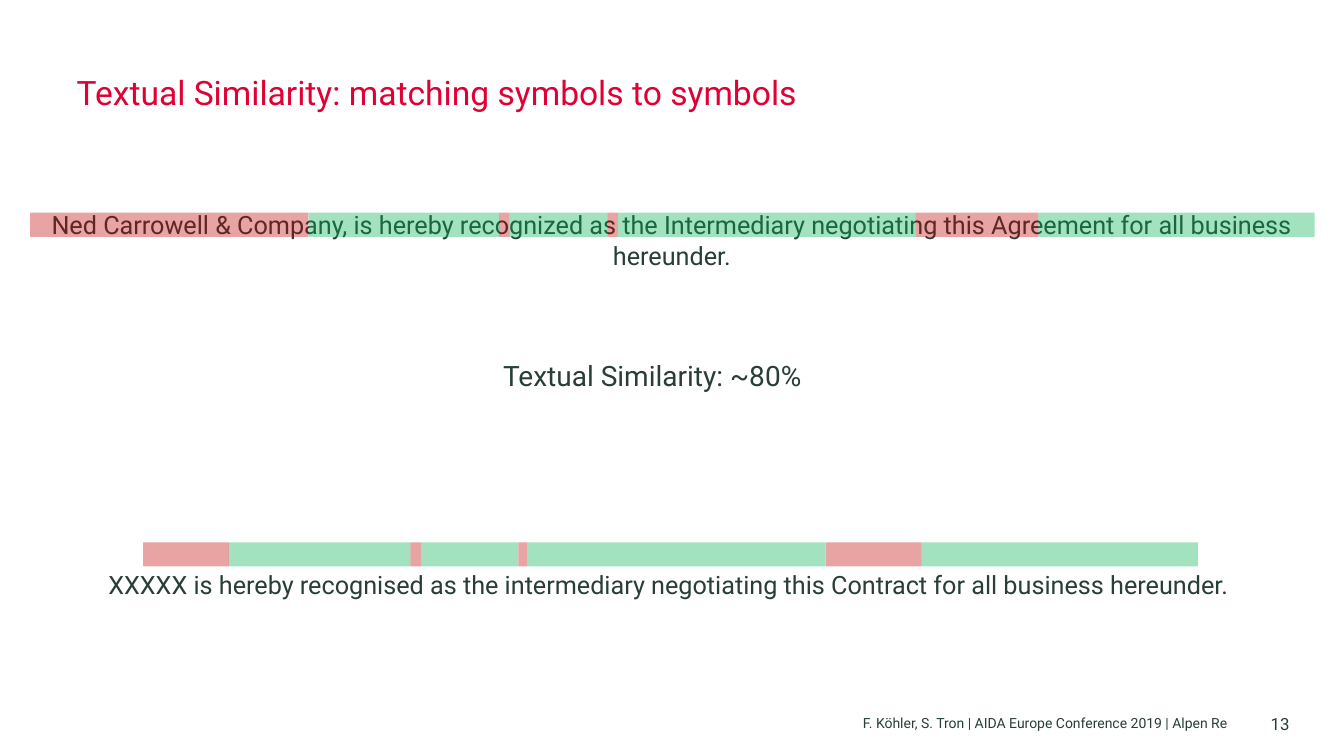
from dataclasses import dataclass
from itertools import pairwise

from lxml import etree
from pptx import Presentation
from pptx.dml.color import RGBColor
from pptx.enum.shapes import MSO_SHAPE
from pptx.enum.text import MSO_ANCHOR, PP_ALIGN
from pptx.oxml.ns import qn
from pptx.util import Inches, Pt

RECTANGLE = MSO_SHAPE.RECTANGLE
TOP, BOTTOM = MSO_ANCHOR.TOP, MSO_ANCHOR.BOTTOM
LEFT, CENTER, RIGHT = PP_ALIGN.LEFT, PP_ALIGN.CENTER, PP_ALIGN.RIGHT
TITLE_ONLY = 5


@dataclass(frozen=True)
class Theme:
    font: str = "Roboto"
    ink: RGBColor = RGBColor(0x28, 0x3E, 0x36)
    accent: RGBColor = RGBColor(0xE0, 0x00, 0x34)
    different: RGBColor = RGBColor(0xC0, 0x00, 0x00)
    same: RGBColor = RGBColor(0x00, 0xB0, 0x50)
    bar_opacity: float = 0.36
    title_size: int = 24
    score_size: int = 20
    body_size: int = 18
    number_size: int = 12
    footer_size: int = 10


THEME = Theme()
BAR_HEIGHT = 0.24

# Edges of the alternating different / same stretches, in inches
FIRST_EDGES = (0.3, 3.06, 4.95, 5.05, 6.03, 6.13, 9.08, 10.3, 13.04)
SECOND_EDGES = (1.42, 2.27, 4.07, 4.18, 5.14, 5.23, 8.19, 9.14, 11.88)


def place(shape, box):
    shape.left, shape.top, shape.width, shape.height = map(Inches, box)


def write(shape, text, size, color=THEME.ink, align=CENTER, anchor=TOP):
    frame = shape.text_frame
    frame.word_wrap = True
    frame.vertical_anchor = anchor
    frame.margin_left = frame.margin_right = 0
    frame.margin_top = frame.margin_bottom = 0
    paragraph = frame.paragraphs[0]
    paragraph.alignment = align
    run = paragraph.add_run()
    run.text = text
    run.font.name = THEME.font
    run.font.size = Pt(size)
    run.font.color.rgb = color
    return paragraph


def add_text(slide, box, text, size, **style):
    return write(slide.shapes.add_textbox(*map(Inches, box)), text, size, **style)


def add_title(slide, box, text):
    title = slide.shapes.title
    place(title, box)
    paragraph = write(title, text, THEME.title_size, color=THEME.accent, align=LEFT)
    paragraph.line_spacing = 0.9


def add_match_bar(slide, top, edges):
    """Draw one grouped bar, alternating different and same stretches."""
    group = slide.shapes.add_group_shape()
    for index, (start, end) in enumerate(pairwise(edges)):
        stretch = group.shapes.add_shape(
            RECTANGLE, Inches(start), Inches(top), Inches(end - start), Inches(BAR_HEIGHT)
        )
        stretch.shadow.inherit = False
        stretch.line.fill.background()
        stretch.fill.solid()
        stretch.fill.fore_color.rgb = THEME.same if index % 2 else THEME.different
        color = stretch.fill._xPr.find(qn("a:solidFill"))[0]
        alpha = etree.SubElement(color, qn("a:alpha"))
        alpha.set("val", str(round(THEME.bar_opacity * 100000)))


def add_compared_sentence(slide, box, text, bar_top, edges):
    add_text(slide, box, text, THEME.body_size)
    add_match_bar(slide, bar_top, edges)


def add_footer(slide, box, text, number):
    left, top, width, height = box
    number_width = 0.31
    add_text(slide, (left, top, width - 2 * number_width, height - 0.02), text,
             THEME.footer_size, align=RIGHT, anchor=BOTTOM)
    add_text(slide, (left + width - number_width, top, number_width, height), number,
             THEME.number_size, align=RIGHT, anchor=BOTTOM)


def build_similarity_slide(presentation):
    slide = presentation.slides.add_slide(presentation.slide_layouts[TITLE_ONLY])
    add_title(slide, (0.76, 0.76, 12.05, 0.76),
              "Textual Similarity: matching symbols to symbols")
    add_compared_sentence(
        slide, (0.26, 2.08, 12.81, 0.6),
        "Ned Carrowell & Company, is hereby recognized as the Intermediary "
        "negotiating this Agreement for all business hereunder.",
        2.11, FIRST_EDGES)
    add_text(slide, (4.7, 3.56, 3.54, 0.34), "Textual Similarity: ~80%", THEME.score_size)
    add_compared_sentence(
        slide, (0.26, 5.65, 12.81, 0.3),
        "XXXXX is hereby recognised as the intermediary negotiating this "
        "Contract for all business hereunder. ",
        5.38, SECOND_EDGES)
    add_footer(slide, (3.56, 7.08, 9.23, 0.2),
               "F. Köhler, S. Tron | AIDA Europe Conference 2019 | Alpen Re", "13")


def main():
    presentation = Presentation()
    presentation.slide_width = Inches(13.33)
    presentation.slide_height = Inches(7.5)
    build_similarity_slide(presentation)
    presentation.save("out.pptx")


if __name__ == "__main__":
    main()
